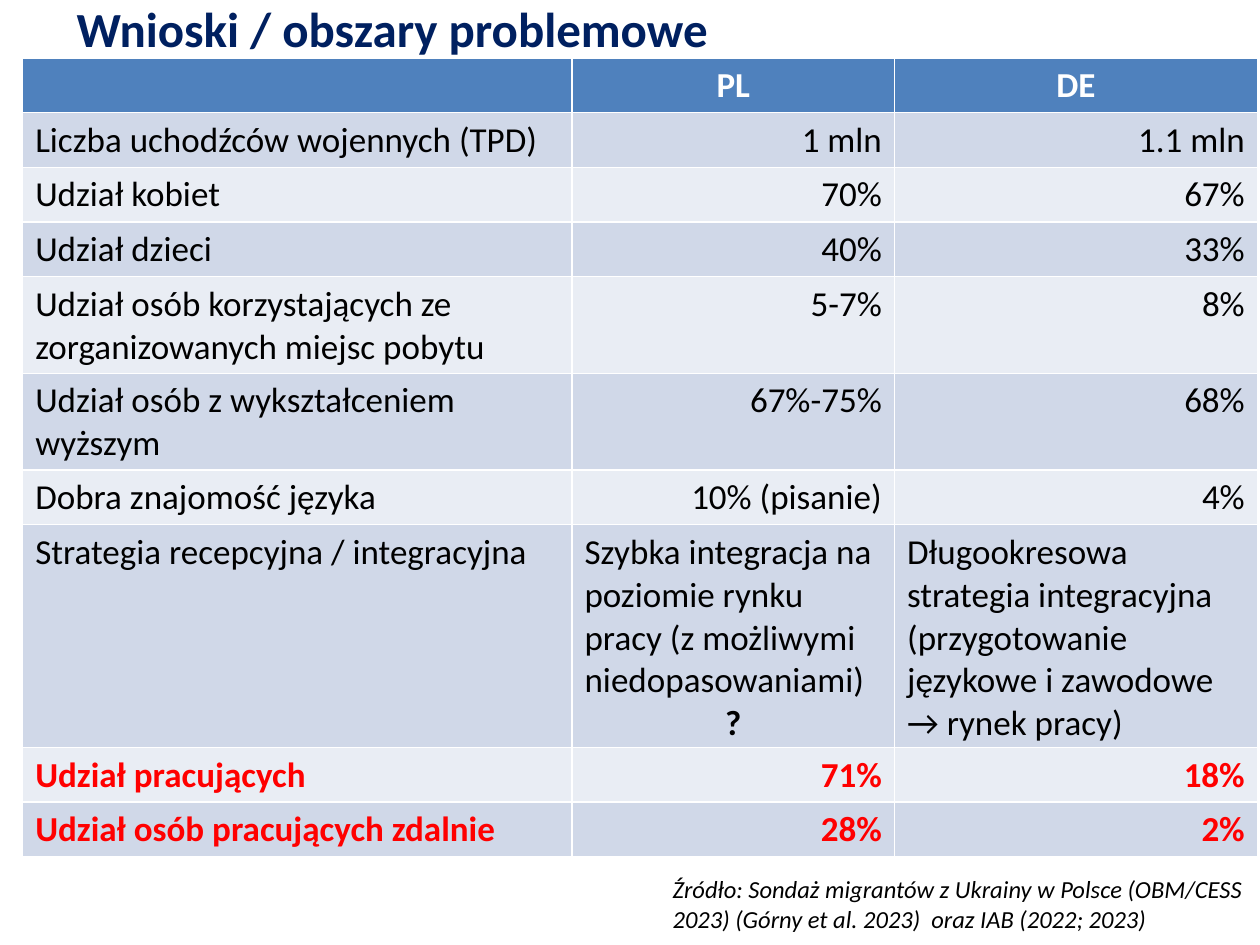
from pptx import Presentation
from pptx.dml.color import RGBColor
from pptx.enum.text import MSO_ANCHOR as Anchor, PP_ALIGN as Align
from pptx.util import Inches, Pt

WIDTH, HEIGHT = 10, 7.5
NAVY, BLUE, RED, BLACK, WHITE = "002060", "4F81BD", "FF0000", "000000", "FFFFFF"
BANDS = "D0D8E8", "E9EDF4"
COLUMN_WIDTHS = 4.36, 2.56, 2.88
ROW_HEIGHT = 0.41

COUNTRIES = "", "PL", "DE"
INDICATORS = [
    ("Liczba uchodźców wojennych (TPD)", "1 mln", "1.1 mln"),
    ("Udział kobiet", "70%", "67%"),
    ("Udział dzieci", "40%", "33%"),
    ("Udział osób korzystających ze zorganizowanych miejsc pobytu", "5-7%", "8%"),
    ("Udział osób z wykształceniem wyższym", "67%-75%", "68%"),
    ("Dobra znajomość języka", "10% (pisanie)", "4%"),
    ("Strategia recepcyjna / integracyjna",
     "Szybka integracja na poziomie rynku pracy (z możliwymi niedopasowaniami)\n?",
     "Długookresowa strategia integracyjna (przygotowanie językowe i zawodowe → rynek pracy)"),
    ("Udział pracujących", "71%", "18%"),
    ("Udział osób pracujących zdalnie", "28%", "2%"),
]
STRATEGY_ROW = 7
EMPLOYMENT_ROWS = 8, 9


def rgb(code):
    """Turn a hex string into a colour."""
    return RGBColor.from_string(code)


def style(paragraph, size, color, bold=False, italic=False, align=Align.LEFT):
    """Set the font and alignment of one paragraph."""
    paragraph.alignment = align
    font = paragraph.font
    font.name, font.size = "Calibri", Pt(size)
    font.bold, font.italic = bold, italic
    font.color.rgb = rgb(color)


def add_text(slide, box, text, anchor, **look):
    """Place a wrapped line of text in the given box."""
    frame = slide.shapes.add_textbox(*map(Inches, box)).text_frame
    frame.word_wrap = True
    frame.vertical_anchor = anchor
    frame.text = text
    style(frame.paragraphs[0], **look)


def fill_cell(cell, text, row, column):
    """Write one table cell, styled by its row and column."""
    header = row == 0
    cell.fill.solid()
    cell.fill.fore_color.rgb = rgb(BLUE if header else BANDS[(row - 1) % 2])
    cell.text = text
    color = WHITE if header else RED if row in EMPLOYMENT_ROWS else BLACK
    for paragraph in cell.text_frame.paragraphs:
        question = paragraph.text == "?"
        if header or question:
            align = Align.CENTER
        elif column == 0 or row == STRATEGY_ROW:
            align = Align.LEFT
        else:
            align = Align.RIGHT
        bold = header or question or row in EMPLOYMENT_ROWS
        style(paragraph, 20, color, bold=bold, align=align)


def add_comparison(slide, left, top):
    """Build the country comparison table from its top left corner."""
    rows = [COUNTRIES, *INDICATORS]
    box = left, top, sum(COLUMN_WIDTHS), ROW_HEIGHT * len(rows)
    table = slide.shapes.add_table(
        len(rows), len(COUNTRIES), *map(Inches, box)).table
    for column, width in zip(table.columns, COLUMN_WIDTHS):
        column.width = Inches(width)
    for r, texts in enumerate(rows):
        for c, text in enumerate(texts):
            fill_cell(table.cell(r, c), text, r, c)


def main():
    """Build and save the slide."""
    deck = Presentation()
    deck.slide_width, deck.slide_height = Inches(WIDTH), Inches(HEIGHT)
    slide = deck.slides.add_slide(deck.slide_layouts[6])
    add_text(slide, (0.51, 0, 8.74, 0.44), "Wnioski / obszary problemowe",
             Anchor.MIDDLE, size=28, color=NAVY, bold=True)
    add_comparison(slide, 0.18, 0.46)
    add_text(slide, (5.24, 6.89, WIDTH - 5.24, 0.57),
             "Źródło: Sondaż migrantów z Ukrainy w Polsce (OBM/CESS 2023) "
             "(Górny et al. 2023)  oraz IAB (2022; 2023)",
             Anchor.TOP, size=14, color=BLACK, italic=True)
    deck.save("out.pptx")


if __name__ == "__main__":
    main()
